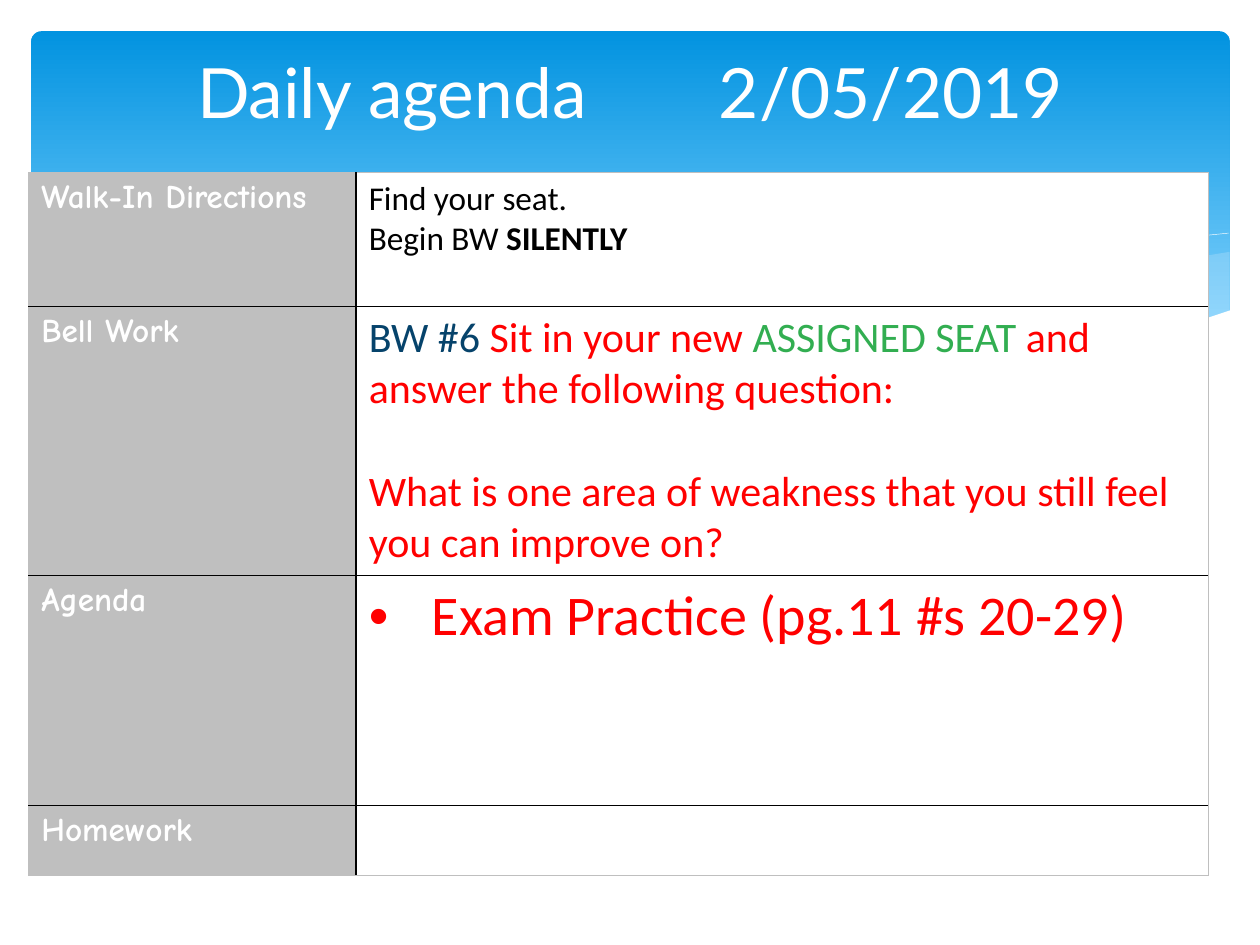
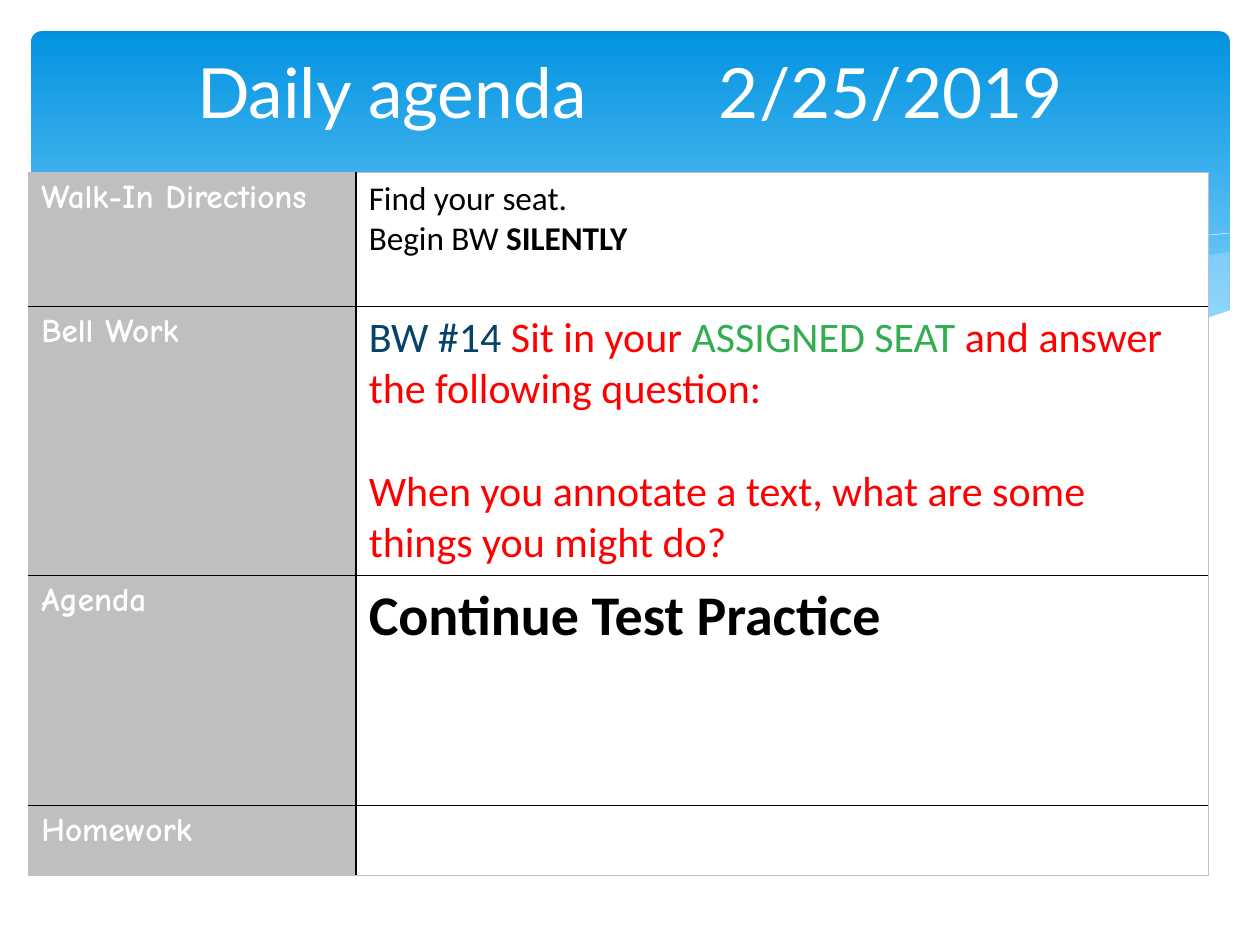
"""Build two daily agenda slides with a blue wave header and an agenda table."""
from lxml.etree import SubElement
from pptx import Presentation
from pptx.dml.color import RGBColor
from pptx.enum.shapes import MSO_SHAPE
from pptx.enum.text import MSO_ANCHOR, PP_ALIGN
from pptx.oxml.ns import qn
from pptx.util import Cm, Pt

WHITE = RGBColor(0xFF, 0xFF, 0xFF)
BLACK = RGBColor(0x00, 0x00, 0x00)
GREY = RGBColor(0xBF, 0xBF, 0xBF)
SKY_TOP = RGBColor(0x02, 0x93, 0xE0)
SKY_BOTTOM = RGBColor(0x83, 0xD3, 0xFE)
MIST = RGBColor(0xC6, 0xE7, 0xFC)
NAVY = RGBColor(0x06, 0x43, 0x6B)
RED = RGBColor(0xFF, 0x00, 0x00)
GREEN = RGBColor(0x32, 0xAE, 0x51)

BACK_WAVE = [(24.77, 5.08), (23.75, 5.25), (21.87, 5.66), (19.13, 6.29), (16.79, 6.73),
             (18.26, 6.91), (19.84, 7.04), (21.46, 7.04), (22.99, 6.88), (24.1, 6.53),
             (24.79, 6.27), (24.79, 5.08)]
MIDDLE_WAVE = [(22.68, 6.93), (20.5, 6.6), (17.93, 6.1), (15.98, 5.64), (14.1, 5.21),
               (12.42, 4.91), (10.67, 4.72), (8.74, 4.72), (7.26, 4.85), (9.19, 5.16),
               (11.4, 5.64), (14.38, 6.3), (16.51, 6.71), (18.34, 6.96), (19.94, 7.06),
               (21.54, 7.04)]
FALLING_CREST = [(7.85, 4.95), (9.22, 4.8), (11, 4.75), (12.95, 4.88), (15.44, 5.18),
                 (17.65, 5.56), (20.19, 6.12), (23.04, 6.91)]
RISING_CREST = [(15.57, 6.53), (17.65, 5.97), (19.71, 5.49), (22, 5.05), (23.47, 4.83),
                (24.77, 4.7)]
FRONT_WAVE = [(24.82, 6.25), (23.62, 6.65), (22.23, 6.93), (20.55, 7.04), (18.9, 6.99),
              (16.97, 6.73), (14.71, 6.35), (11.35, 5.59), (8.64, 5), (6.35, 4.72),
              (4.5, 4.67), (2.69, 4.8), (1.17, 5.16), (0.58, 5.41), (0.58, 8.36),
              (24.82, 8.36)]
WAVES = [(BACK_WAVE, MIST, 29), (MIDDLE_WAVE, MIST, 40), (FALLING_CREST, None, 100),
         (RISING_CREST, None, 100), (FRONT_WAVE, WHITE, 100)]

COLUMN_WIDTHS = [6.6, 17.17]
ROW_HEIGHTS = [2.7, 5.42, 4.64, 1.41]
LABELS = ["Walk-In Directions", "Bell Work", "Agenda", "Homework"]
DAYS = [
    {"date": "2/05/2019", "number": "BW #6 ", "seat": "Sit in your new ",
     "question": "What is one area of weakness that you still feel you can improve on?",
     "task": "Exam Practice (pg.11 #s 20-29)", "bulleted": True},
    {"date": "2/25/2019", "number": "BW #14 ", "seat": "Sit in your ",
     "question": "When you annotate a text, what are some things you might do?",
     "task": "Continue Test Practice", "bulleted": False},
]


def write(paragraph, text, size=19, font="Calibri", color=BLACK, bold=False):
    run = paragraph.add_run()
    run.text = text
    run.font.size = Pt(size)
    run.font.name = font
    run.font.color.rgb = color
    run.font.bold = bold


def draw_wave(slide, points, color, opacity):
    outline = [(Cm(x), Cm(y)) for x, y in points]
    builder = slide.shapes.build_freeform(*outline[0], scale=1.0)
    builder.add_line_segments(outline[1:], close=color is not None)
    wave = builder.convert_to_shape()
    wave.shadow.inherit = False
    if color is None:
        wave.fill.background()
        wave.line.color.rgb = WHITE
        wave.line.width = Pt(0.25)
        return
    wave.line.fill.background()
    wave.fill.solid()
    wave.fill.fore_color.rgb = color
    if opacity < 100:
        tint = wave.fill._xPr.find(qn("a:solidFill"))[0]
        SubElement(tint, qn("a:alpha"), val=str(opacity * 1000))


prs = Presentation()
prs.slide_width = Cm(25.4)
prs.slide_height = Cm(19.05)

for day in DAYS:
    slide = prs.slides.add_slide(prs.slide_layouts[6])

    sky = slide.shapes.add_shape(MSO_SHAPE.ROUNDED_RECTANGLE, Cm(0.63), Cm(0.63), Cm(24.16), Cm(6.86))
    sky.adjustments[0] = 0.03
    sky.shadow.inherit = False
    sky.line.fill.background()
    sky.fill.gradient()
    sky.fill.gradient_angle = 270
    for stop, color, position in zip(sky.fill.gradient_stops, (SKY_TOP, SKY_BOTTOM), (0, 0.9)):
        stop.color.rgb = color
        stop.position = position
    for points, color, opacity in WAVES:
        draw_wave(slide, points, color, opacity)

    title = slide.shapes.add_textbox(Cm(1.27), Cm(0.94), Cm(22.86), Cm(1.8)).text_frame
    title.word_wrap = True
    title.vertical_anchor = MSO_ANCHOR.MIDDLE
    heading = title.paragraphs[0]
    heading.alignment = PP_ALIGN.CENTER
    tab_stops = SubElement(heading._p.get_or_add_pPr(), qn("a:tabLst"))
    SubElement(tab_stops, qn("a:tab"), pos=str(Cm(10.16)), algn="l")
    write(heading, "Daily agenda\t " + day["date"], size=39.6, font="Lato", color=WHITE)

    agenda = slide.shapes.add_table(4, 2, Cm(0.58), Cm(3.48), Cm(sum(COLUMN_WIDTHS)),
                                    Cm(sum(ROW_HEIGHTS))).table
    agenda.first_row = agenda.horz_banding = False
    for column, width in zip(agenda.columns, COLUMN_WIDTHS):
        column.width = Cm(width)
    for row, height in zip(agenda.rows, ROW_HEIGHTS):
        row.height = Cm(height)

    for r, label in enumerate(LABELS):
        for c, background in enumerate((GREY, WHITE)):
            cell = agenda.cell(r, c)
            properties = cell._tc.get_or_add_tcPr()
            edges = {"L": (c == 0, 1), "R": (c == 1, 1 - c / 2),
                     "T": (r == 0, 0.5), "B": (r == 3, 0.5)}
            for side, (outer, width) in edges.items():
                border = SubElement(properties, qn(f"a:ln{side}"), w=str(Pt(width)))
                paint = SubElement(border, qn("a:solidFill"))
                SubElement(paint, qn("a:srgbClr"), val=str(GREY if outer else BLACK))
            cell.fill.solid()
            cell.fill.fore_color.rgb = background
        write(agenda.cell(r, 0).text_frame.paragraphs[0], label, font="Comic Neue", color=WHITE, bold=True)

    directions, bell_work, tasks = [agenda.cell(r, 1).text_frame for r in range(3)]
    write(directions.paragraphs[0], "Find your seat.")
    begin = directions.add_paragraph()
    write(begin, "Begin BW ")
    write(begin, "SILENTLY", bold=True)

    for text, color in ((day["number"], NAVY), (day["seat"], RED), ("ASSIGNED SEAT ", GREEN),
                        ("and answer the following question:", RED)):
        write(bell_work.paragraphs[0], text, size=24, color=color)
    question = bell_work.add_paragraph()
    question.space_before = Pt(29.3)
    write(question, day["question"], size=24, color=RED)

    task = tasks.paragraphs[0]
    if day["bulleted"]:
        indents = task._p.get_or_add_pPr()
        indents.set("marL", str(Cm(1.27)))
        indents.set("indent", str(-Cm(1.27)))
        SubElement(indents, qn("a:buFont"), typeface="Arial")
        SubElement(indents, qn("a:buChar"), char="•")
    write(task, day["task"], size=32, color=RED if day["bulleted"] else BLACK, bold=not day["bulleted"])

prs.save("out.pptx")
